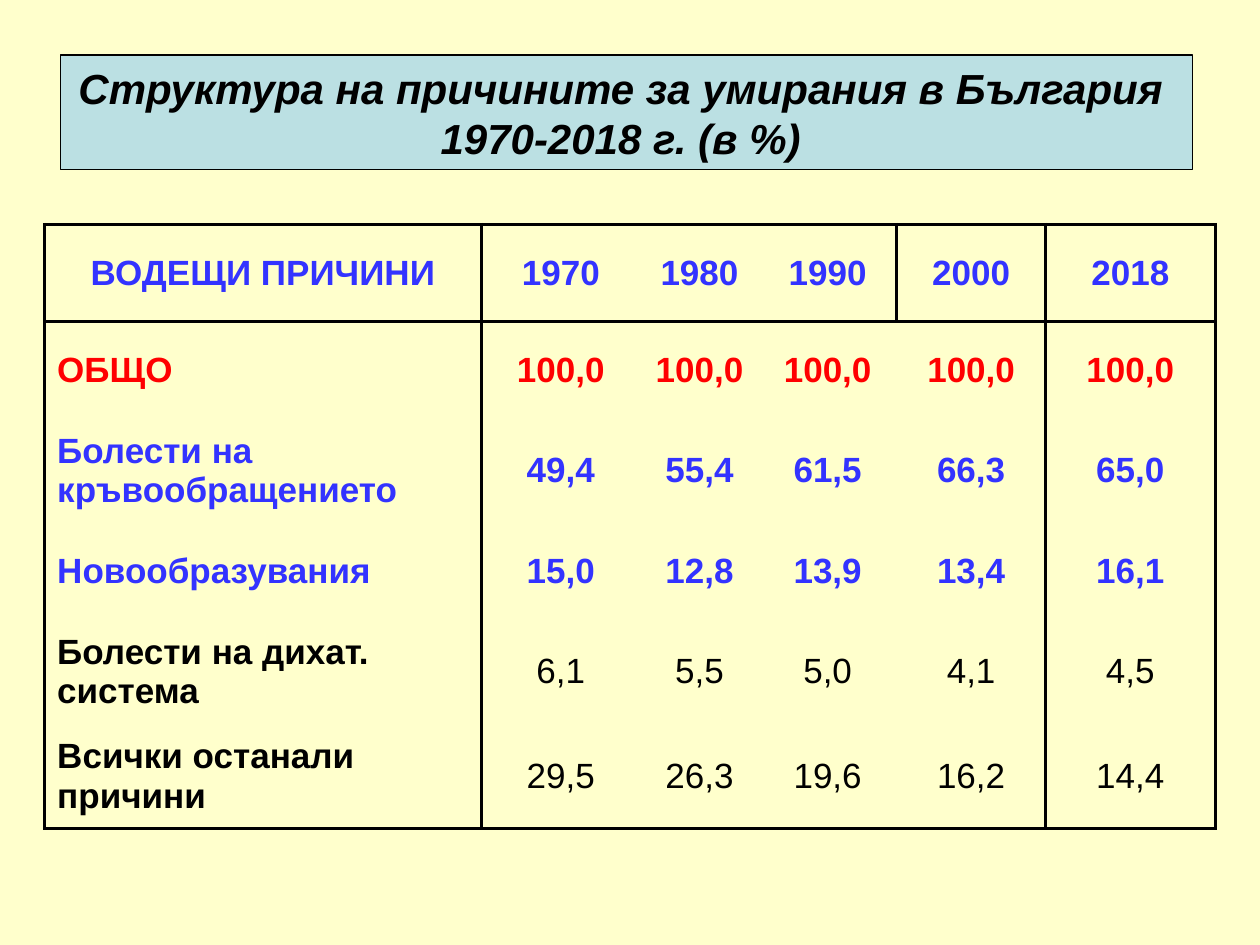
"""Build a slide with a table of the leading causes of death in Bulgaria."""
import pptx
import pptx.dml.color
import pptx.enum.text
import pptx.oxml
import pptx.oxml.ns
import pptx.util

Pt = pptx.util.Pt
PP_ALIGN = pptx.enum.text.PP_ALIGN
MIDDLE = pptx.enum.text.MSO_ANCHOR.MIDDLE

COLORS = {
    "page": "FFFFCC",
    "banner": "BBE0E3",
    "ink": "000000",
    "blue": "3333FF",
    "red": "FF0000",
}
HEADING = [
    "Структура на причините за умирания в България ",
    "1970-2018 г. (в %) ",
]
CAUSES = [
    (("ВОДЕЩИ ПРИЧИНИ", "1970", "1980", "1990", "2000", "2018"), "blue", True),
    (("ОБЩО", "100,0", "100,0", "100,0", "100,0", "100,0"), "red", True),
    (("Болести на кръвообращението", "49,4", "55,4", "61,5", "66,3", "65,0"), "blue", True),
    (("Новообразувания", "15,0", "12,8", "13,9", "13,4", "16,1"), "blue", True),
    (("Болести на дихат. система", "6,1", "5,5", "5,0", "4,1", "4,5"), "ink", False),
    (("Всички останали причини", "29,5", "26,3", "19,6", "16,2", "14,4"), "ink", False),
]
COLUMN_WIDTHS = [249.5, 91, 67.5, 79, 85, 97]
ROW_HEIGHTS = [55.5, 55.5, 59.5, 55.5, 59.5, 60]
TABLE_LEFT, TABLE_TOP = 25.5, 128.2
BANNER_BOX = {"left": Pt(34.5), "top": Pt(31.5), "width": Pt(647), "height": Pt(65.5)}
BANNER_FRAME = {
    "word_wrap": False,
    "auto_size": pptx.enum.text.MSO_AUTO_SIZE.SHAPE_TO_FIT_TEXT,
    "vertical_anchor": MIDDLE,
}
CELL_FORMAT = {
    "vertical_anchor": MIDDLE,
    "margin_left": Pt(7.2),
    "margin_right": Pt(7.2),
    "margin_top": Pt(3.6),
    "margin_bottom": Pt(3.6),
}
BODY_RULES = {0, 1, 5, 6}
HEADER_RULES = BODY_RULES | {4}
ROW_RULES = {0, 1, 6}
RULE_WIDTH = Pt(2)


def apply(target, values):
    for name, value in values.items():
        setattr(target, name, value)


def rgb(name):
    return pptx.dml.color.RGBColor.from_string(COLORS[name])


def write(paragraph, text, align, color, **font_values):
    paragraph.alignment = align
    run = paragraph.add_run()
    run.text = text
    apply(run.font, {"name": "Arial", **font_values})
    run.font.color.rgb = rgb(color)


def draw_borders(cell, row, column):
    column_rules = BODY_RULES if row else HEADER_RULES
    sides = {
        "lnL": column in column_rules,
        "lnR": column + 1 in column_rules,
        "lnT": row in ROW_RULES,
        "lnB": row + 1 in ROW_RULES,
    }
    properties = cell._tc.get_or_add_tcPr()
    for position, (side, ruled) in enumerate(sides.items()):
        paint = f'<a:solidFill><a:srgbClr val="{COLORS["ink"]}"/></a:solidFill>' if ruled else "<a:noFill/>"
        width = RULE_WIDTH if ruled else 0
        border = pptx.oxml.parse_xml(
            f'<a:{side} {pptx.oxml.ns.nsdecls("a")} w="{width}">{paint}</a:{side}>'
        )
        properties.insert(position, border)


def add_heading(slide):
    banner = slide.shapes.title
    apply(banner, BANNER_BOX)
    banner.fill.solid()
    banner.fill.fore_color.rgb = rgb("banner")
    banner.line.color.rgb = rgb("ink")
    banner.line.width = Pt(0.75)
    frame = banner.text_frame
    apply(frame, BANNER_FRAME)
    for index, line in enumerate(HEADING):
        paragraph = frame.add_paragraph() if index else frame.paragraphs[0]
        write(paragraph, line, PP_ALIGN.CENTER, "ink", size=Pt(24), bold=True, italic=True)


def add_causes(slide):
    table = slide.shapes.add_table(
        len(CAUSES), len(COLUMN_WIDTHS), Pt(TABLE_LEFT), Pt(TABLE_TOP),
        Pt(sum(COLUMN_WIDTHS)), Pt(sum(ROW_HEIGHTS)),
    ).table
    apply(table, {"first_row": False, "horz_banding": False})
    for column, width in zip(table.columns, COLUMN_WIDTHS):
        column.width = Pt(width)
    for row, height in zip(table.rows, ROW_HEIGHTS):
        row.height = Pt(height)
    for row, (texts, color, bold_values) in enumerate(CAUSES):
        for column, text in enumerate(texts):
            cell = table.cell(row, column)
            apply(cell, CELL_FORMAT)
            cell.fill.background()
            draw_borders(cell, row, column)
            is_cause = row > 0 and column == 0
            align = PP_ALIGN.LEFT if is_cause else PP_ALIGN.CENTER
            write(cell.text_frame.paragraphs[0], text, align, color,
                  size=Pt(20), bold=bold_values or is_cause)


def main():
    deck = pptx.Presentation()
    apply(deck, {"slide_width": Pt(720), "slide_height": Pt(540)})
    slide = deck.slides.add_slide(deck.slide_layouts[5])
    slide.background.fill.solid()
    slide.background.fill.fore_color.rgb = rgb("page")
    add_causes(slide)
    add_heading(slide)
    deck.save("out.pptx")


if __name__ == "__main__":
    main()
